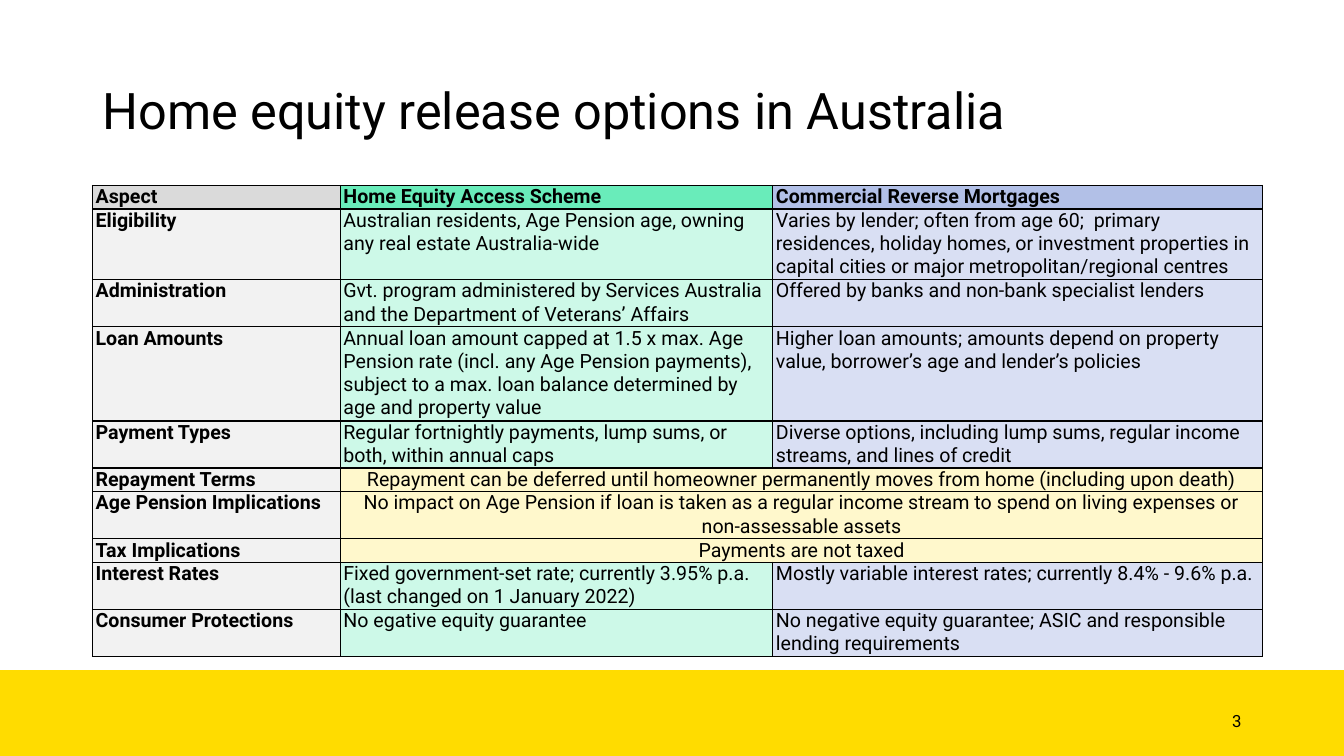
from pptx import Presentation
from pptx.dml.color import RGBColor as RGB
from pptx.enum.shapes import MSO_SHAPE as SHAPE
from pptx.enum.text import MSO_ANCHOR as ANCHOR, PP_ALIGN as ALIGN
from pptx.oxml import parse_xml
from pptx.oxml.ns import nsdecls
from pptx.util import Pt

TITLE = "Home equity release options in Australia"
PAGE = "3"
HEADER = ("Aspect", "Home Equity Access Scheme", "Commercial Reverse Mortgages")
ROWS = [
    (3, "Eligibility",
     "Australian residents, Age Pension age, owning any real estate Australia-wide",
     "Varies by lender; often from age 60;  primary residences, holiday homes, or investment "
     "properties in capital cities or major metropolitan/regional centres"),
    (2, "Administration",
     "Gvt. program administered by Services Australia and the Department of Veterans’ Affairs",
     "Offered by banks and non-bank specialist lenders"),
    (4, "Loan Amounts",
     "Annual loan amount capped at 1.5 x max. Age Pension rate (incl. any Age Pension payments), "
     "subject to a max. loan balance determined by age and property value",
     "Higher loan amounts; amounts depend on property value, borrower’s age and lender’s policies"),
    (2, "Payment Types",
     "Regular fortnightly payments, lump sums, or both, within annual caps",
     "Diverse options, including lump sums, regular income streams, and lines of credit"),
    (1, "Repayment Terms",
     "Repayment can be deferred until homeowner permanently moves from home "
     "(including upon death)"),
    (2, "Age Pension Implications",
     "No impact on Age Pension if loan is taken as a regular income stream to spend on "
     "living expenses or non-assessable assets"),
    (1, "Tax Implications", "Payments are not taxed"),
    (2, "Interest Rates",
     "Fixed government-set rate; currently 3.95% p.a. (last changed on 1 January 2022)",
     "Mostly variable interest rates; currently 8.4% - 9.6% p.a."),
    (2, "Consumer Protections",
     "No egative equity guarantee",
     "No negative equity guarantee; ASIC and responsible lending requirements"),
]
COLORS = {"text": "000000", "bar": "FFDC00", "shared": "FFF8CC"}
HEAD_FILLS = ("DADADA", "69ECBA", "B2C0E7")
BODY_FILLS = ("F2F2F2", "CDF9E8", "D9DFF3")
FONT = "Roboto"
COL_WIDTHS = (177, 309, 350)
LINE_HEIGHT = 16.5
LEFT, TABLE_TOP = 66.1, 132.5


def write(tf, text, size=14, bold=False, align=ALIGN.LEFT, spacing=None):
    """Write one formatted paragraph into a text frame."""
    tf.word_wrap = True
    p = tf.paragraphs[0]
    p.alignment = align
    if spacing:
        p.line_spacing = spacing
    r = p.add_run()
    r.text = text
    r.font.name, r.font.size, r.font.bold = FONT, Pt(size), bold
    r.font.color.rgb = RGB.from_string(COLORS["text"])


def add_text(s, text, left, top, width, height, **fmt):
    """Add a vertically centred text box."""
    tf = s.shapes.add_textbox(Pt(left), Pt(top), Pt(width), Pt(height)).text_frame
    tf.vertical_anchor = ANCHOR.MIDDLE
    write(tf, text, **fmt)


def style_cell(cell, fill):
    """Give a cell its margins, borders and fill."""
    cell.margin_left = cell.margin_right = Pt(2.2)
    cell.margin_top = cell.margin_bottom = 0
    for side in ("lnL", "lnR", "lnT", "lnB"):
        cell._tc.get_or_add_tcPr().append(parse_xml(
            f'<a:{side} {nsdecls("a")} w="{Pt(1)}"><a:solidFill>'
            f'<a:srgbClr val="{COLORS["text"]}"/></a:solidFill></a:{side}>'))
    cell.fill.solid()
    cell.fill.fore_color.rgb = RGB.from_string(fill)


def add_options_table(s):
    """Add the comparison table, merging the answers both options share."""
    rows = [(1, *HEADER), *ROWS]
    height = LINE_HEIGHT * sum(row[0] for row in rows)
    table = s.shapes.add_table(len(rows), len(COL_WIDTHS), Pt(LEFT), Pt(TABLE_TOP),
                               Pt(sum(COL_WIDTHS)), Pt(height)).table
    for column, width in zip(table.columns, COL_WIDTHS):
        column.width = Pt(width)
    for i, (lines, *texts) in enumerate(rows):
        table.rows[i].height = Pt(LINE_HEIGHT * lines)
        shared = len(texts) == 2
        fills = HEAD_FILLS if i == 0 else BODY_FILLS
        if shared:
            fills = (fills[0], COLORS["shared"], COLORS["shared"])
            table.cell(i, 1).merge(table.cell(i, 2))
        for j, fill in enumerate(fills):
            style_cell(table.cell(i, j), fill)
        for j, text in enumerate(texts):
            write(table.cell(i, j).text_frame, text, bold=i == 0 or j == 0,
                  align=ALIGN.CENTER if shared and j else ALIGN.LEFT)


def main():
    """Build the slide and save it."""
    prs = Presentation()
    prs.slide_width, prs.slide_height = Pt(960), Pt(540)
    s = prs.slides.add_slide(prs.slide_layouts[6])
    bar = s.shapes.add_shape(SHAPE.RECTANGLE, 0, Pt(478.6), Pt(960), Pt(61.4))
    bar.shadow.inherit = False
    bar.fill.solid()
    bar.fill.fore_color.rgb = RGB.from_string(COLORS["bar"])
    bar.line.fill.background()
    add_text(s, TITLE, LEFT, 28.8, 828, 104.4, size=36, spacing=0.9)
    add_options_table(s)
    add_text(s, PAGE, 678, 500.5, 216, 28.8, size=12, align=ALIGN.RIGHT)
    prs.save("out.pptx")


if __name__ == "__main__":
    main()
